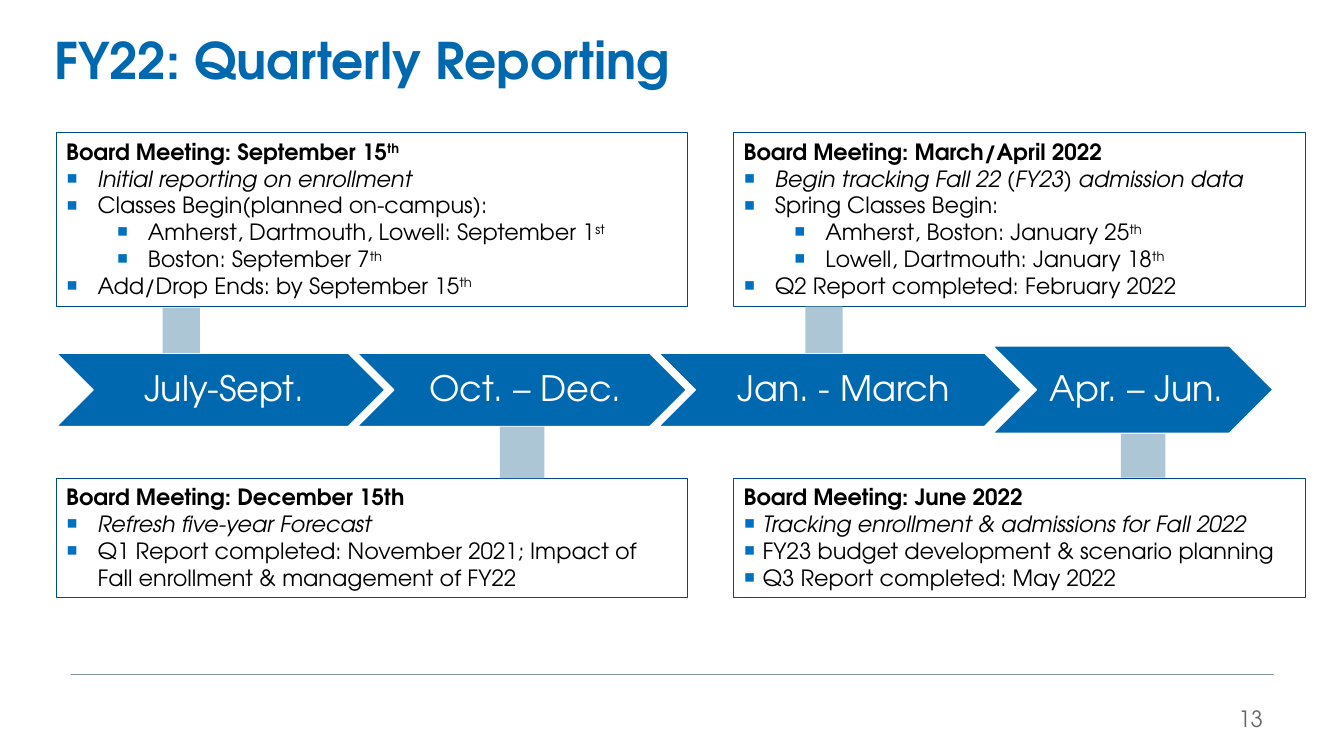
from lxml import etree
from pptx import Presentation
from pptx.dml.color import RGBColor
from pptx.enum.shapes import MSO_CONNECTOR, MSO_SHAPE
from pptx.enum.text import MSO_ANCHOR, PP_ALIGN
from pptx.oxml.ns import qn
from pptx.util import Cm, Pt

FONT = "TeX Gyre Adventor"
BLUE = RGBColor(0x00, 0x68, 0xAE)
NAVY = RGBColor(0x00, 0x4B, 0x86)
PALE = RGBColor(0xAC, 0xC6, 0xD6)
SLATE = RGBColor(0x7F, 0x94, 0x9F)
GRAY = RGBColor(0x66, 0x66, 0x66)
BLACK = RGBColor(0, 0, 0)
WHITE = RGBColor(0xFF, 0xFF, 0xFF)
DOT = "0070C0"

RECT, CHEVRON = MSO_SHAPE.RECTANGLE, MSO_SHAPE.CHEVRON
STRAIGHT = MSO_CONNECTOR.STRAIGHT
TOP, MIDDLE = MSO_ANCHOR.TOP, MSO_ANCHOR.MIDDLE
LEFT, CENTER, RIGHT = PP_ALIGN.LEFT, PP_ALIGN.CENTER, PP_ALIGN.RIGHT

# Column and row edges of the boxes, in cm
COL1, COL2 = 1.42, 18.49
WIDE, SLIM = 15.9, 14.4
ROW1, ROW2 = 3.35, 12.05
TALL, SHORT = 4.37, 3.0

# Box, hanging indent, heading, then lines of (text, level, italic);
# what follows ^ is raised
BOARDS = [
    ((COL1, ROW1, WIDE, TALL), 0.79, "Board Meeting: September 15^th", [
        ("Initial reporting on enrollment", 0, True),
        ("Classes Begin(planned on-campus):", 0, False),
        ("Amherst, Dartmouth, Lowell: September 1^st", 1, False),
        ("Boston: September 7^th", 1, False),
        ("Add/Drop Ends: by September 15^th", 0, False)]),
    ((COL2, ROW1, SLIM, TALL), 0.79, "Board Meeting: March/April 2022", [
        ("Begin tracking Fall 22 (FY23) admission data", 0, True),
        ("Spring Classes Begin:", 0, False),
        ("Amherst, Boston: January 25^th", 1, False),
        ("Lowell, Dartmouth: January 18^th", 1, False),
        ("Q2 Report completed: February 2022", 0, False)]),
    ((COL1, ROW2, WIDE, SHORT), 0.79, "Board Meeting: December 15th", [
        ("Refresh five-year Forecast", 0, True),
        ("Q1 Report completed: November 2021; Impact of Fall enrollment "
         "& management of FY22", 0, False)]),
    ((COL2, ROW2, SLIM, SHORT), 0.48, "Board Meeting: June 2022", [
        ("Tracking enrollment & admissions for Fall 2022", 0, True),
        ("FY23 budget development & scenario planning", 0, False),
        ("Q3 Report completed: May 2022", 0, False)]),
]

STEPS = [
    ("July-Sept.", (1.42, 8.9, 8.28, 1.85)),
    ("Oct. – Dec.", (9.0, 8.9, 8.3, 1.85)),
    ("Jan. - March", (16.6, 8.9, 9.14, 1.85)),
    ("Apr. – Jun.", (25.02, 8.72, 7.06, 2.2)),
]

LINKS = [
    (4.1, 7.75, 0.94, 1.15),
    (20.3, 7.73, 0.94, 1.17),
    (12.6, 10.75, 1.12, 1.3),
    (28.25, 10.94, 1.12, 1.1),
]


def place(box):
    return [Cm(side) for side in box]


def style(run, size, color, bold=False, italic=False):
    font = run.font
    font.name, font.size = FONT, Pt(size)
    font.bold, font.italic = bold, italic
    font.color.rgb = color


def add_rich(para, text, **look):
    """Write text, raising what follows the ^ mark."""
    base, _, high = text.partition("^")
    para.text = base
    if high:
        run = para.add_run()
        run.text = high
        run._r.get_or_add_rPr().set("baseline", "30000")
    for run in para.runs:
        style(run, 16, BLACK, **look)


def add_dot(para, left, hang):
    props = para._p.get_or_add_pPr()
    props.set("marL", str(Cm(left)))
    props.set("indent", str(-Cm(hang)))
    color = etree.SubElement(props, qn("a:buClr"))
    etree.SubElement(color, qn("a:srgbClr")).set("val", DOT)
    etree.SubElement(props, qn("a:buFont")).set("typeface", FONT)
    etree.SubElement(props, qn("a:buChar")).set("char", "▪")


def add_label(slide, box, text, size, color, align, bold=False):
    frame = slide.shapes.add_textbox(*place(box)).text_frame
    frame.word_wrap = True
    frame.vertical_anchor = MIDDLE
    frame.text = text
    para = frame.paragraphs[0]
    para.alignment = align
    para.line_spacing = 0.9
    style(para.runs[0], size, color, bold)


def add_board(slide, box, hang, head, lines):
    shape = slide.shapes.add_shape(RECT, *place(box))
    shape.shadow.inherit = False
    shape.fill.background()
    shape.line.color.rgb = NAVY
    shape.line.width = Pt(0.75)
    frame = shape.text_frame
    frame.word_wrap = True
    frame.vertical_anchor = TOP
    para = frame.paragraphs[0]
    para.alignment = LEFT
    add_rich(para, head, bold=True)
    for text, level, italic in lines:
        para = frame.add_paragraph()
        para.alignment = LEFT
        para.level = level
        add_dot(para, hang + 1.27 * level, hang)
        add_rich(para, text, italic=italic)


def add_step(slide, text, box):
    shape = slide.shapes.add_shape(CHEVRON, *place(box))
    shape.shadow.inherit = False
    shape.fill.solid()
    shape.fill.fore_color.rgb = BLUE
    shape.line.color.rgb = WHITE
    shape.line.width = Pt(1)
    frame = shape.text_frame
    frame.word_wrap = True
    frame.vertical_anchor = MIDDLE
    frame.margin_left = Cm(0.28)
    frame.margin_right = frame.margin_top = frame.margin_bottom = Cm(0.1)
    frame.text = text
    para = frame.paragraphs[0]
    para.alignment = CENTER
    para.line_spacing = 0.9
    style(para.runs[0], 25, WHITE)


def add_link(slide, box):
    shape = slide.shapes.add_shape(RECT, *place(box))
    shape.shadow.inherit = False
    shape.fill.solid()
    shape.fill.fore_color.rgb = PALE
    shape.line.fill.background()


def add_foot(slide, left, top, width):
    y = Cm(top)
    rule = slide.shapes.add_connector(STRAIGHT, Cm(left), y, Cm(left + width), y)
    rule.line.color.rgb = SLATE
    rule.line.width = Pt(0.5)
    etree.SubElement(rule._element.spPr, qn("a:effectLst"))
    add_label(slide, (left + width - 2.57, top + 0.79, 2.54, 0.71),
              "13", 16, GRAY, RIGHT)


def main():
    deck = Presentation()
    deck.slide_width, deck.slide_height = Cm(33.87), Cm(19.05)
    slide = deck.slides.add_slide(deck.slide_layouts[6])

    # Title and footer
    add_foot(slide, 1.78, 17, 30.33)
    add_label(slide, (1.12, 0.53, 29.72, 2.11), "FY22: Quarterly Reporting",
              36, BLUE, LEFT, bold=True)

    # Timeline, board meetings and the links between them
    for text, box in STEPS:
        add_step(slide, text, box)
    for board in BOARDS:
        add_board(slide, *board)
    for box in LINKS:
        add_link(slide, box)

    deck.save("out.pptx")


if __name__ == "__main__":
    main()
